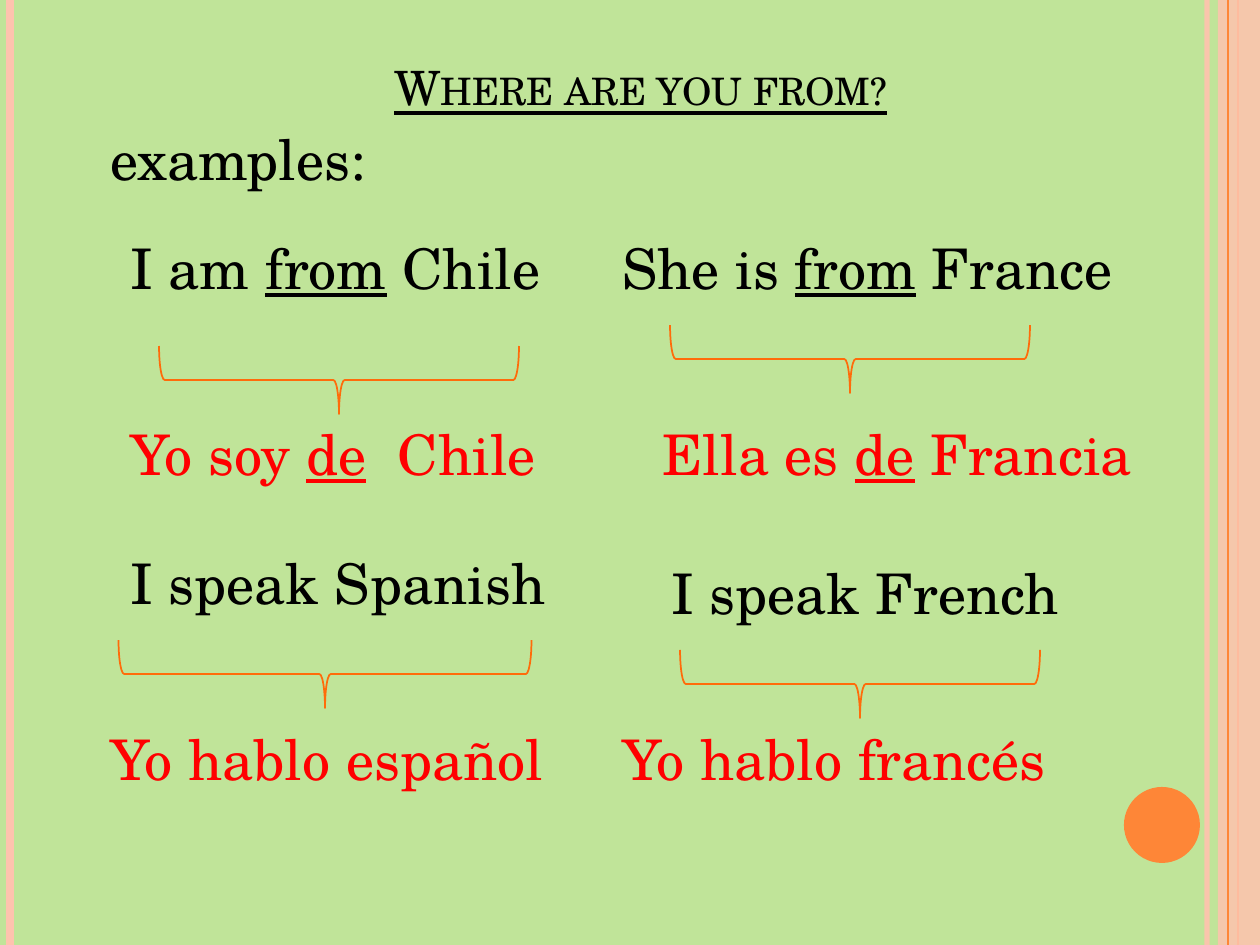
from lxml.etree import SubElement
from pptx import Presentation
from pptx.dml.color import RGBColor
from pptx.enum.shapes import MSO_CONNECTOR, MSO_SHAPE
from pptx.enum.text import MSO_ANCHOR
from pptx.oxml.ns import qn
from pptx.util import Emu, Pt

WIDE, HIGH = 1260, 945
SCALE = 914400 / 126
FONT = "TeX Gyre Schola"
GREEN = RGBColor(0xC0, 0xE4, 0x99)
PINK = RGBColor(0xFE, 0xC3, 0xAE)
ORANGE = RGBColor(0xFE, 0x86, 0x37)
BRACE = RGBColor(0xFF, 0x6B, 0x0A)
BLACK = RGBColor(0, 0, 0)
RED = RGBColor(0xFF, 0, 0)

TITLE = "_Where are you from?_"
# text with _underlined_ parts, left, top, width, colour
PHRASES = [
    ("examples:", 98, 118, 493, BLACK),
    ("I am _from_ Chile", 118, 227, 452, BLACK),
    ("She is _from_ France", 610, 227, 532, BLACK),
    ("Yo soy _de_  Chile", 118, 413, 452, RED),
    ("Ella es _de_ Francia", 650, 413, 532, RED),
    ("I speak Spanish", 118, 542, 452, BLACK),
    ("I speak French", 659, 552, 452, BLACK),
    ("Yo hablo español", 98, 718, 493, RED),
    ("Yo hablo francés", 610, 718, 493, RED),
]
# centre x, centre y, span
BRACES = [(339, 380, 360), (850, 359, 360), (325, 674, 413), (860, 684, 360)]
DEPTH = 68
# x, colour, points, opacity in percent
RULES = [(1207, PINK, 3, 93), (10, PINK, 4.5, 100), (1238, ORANGE, 1.5, 100)]
EDGE_RULE = (1228, ORANGE, 0.75, 100)


def px(num):
    return Emu(round(num * SCALE))


def fade(fill, share):
    """Set the opacity, in percent, of a solid fill inside the given element."""
    tint = fill.find(".//" + qn("a:srgbClr"))
    SubElement(tint, qn("a:alpha"), val=str(share * 1000))


def add_rule(slide, x, tone, size, share):
    rule = slide.shapes.add_connector(
        MSO_CONNECTOR.STRAIGHT, px(x), 0, px(x), px(HIGH))
    rule.line.color.rgb = tone
    rule.line.width = Pt(size)
    props = rule._element.spPr
    if share < 100:
        fade(props.find(qn("a:ln")), share)
    SubElement(props, qn("a:effectLst"))


def add_form(slide, kind, box, fill=None, line=None):
    form = slide.shapes.add_shape(kind, *map(px, box))
    form.shadow.inherit = False
    if fill is None:
        form.fill.background()
    else:
        form.fill.solid()
        form.fill.fore_color.rgb = fill
    if line is None:
        form.line.fill.background()
    else:
        form.line.color.rgb = line
        form.line.width = Pt(1)
    return form


def add_text(slide, text, box, size=32, tone=BLACK, before=6, indent=0,
             anchor=MSO_ANCHOR.TOP, small=False):
    """Add a text box; parts between underscores are underlined."""
    frame = slide.shapes.add_textbox(*map(px, box)).text_frame
    frame.word_wrap = True
    frame.vertical_anchor = anchor
    para = frame.paragraphs[0]
    para.space_before = Pt(before)
    if indent:
        para._p.get_or_add_pPr().set("marL", str(px(indent)))
    for spot, part in enumerate(text.split("_")):
        if not part:
            continue
        run = para.add_run()
        run.text = part
        font = run.font
        font.name, font.size, font.color.rgb = FONT, Pt(size), tone
        font.underline = spot % 2 == 1
        if small:
            run._r.get_or_add_rPr().set("cap", "small")


def main():
    deck = Presentation()
    deck.slide_width, deck.slide_height = px(WIDE), px(HIGH)
    slide = deck.slides.add_slide(deck.slide_layouts[6])
    back = slide.background.fill
    back.solid()
    back.fore_color.rgb = GREEN

    for rule in RULES:
        add_rule(slide, *rule)
    band = add_form(slide, MSO_SHAPE.RECTANGLE, (1218, 0, 42, HIGH), fill=PINK)
    fade(band._element.spPr.find(qn("a:solidFill")), 87)
    add_rule(slide, *EDGE_RULE)
    add_form(slide, MSO_SHAPE.OVAL, (1124, 787, 76, 76), fill=ORANGE)

    add_text(slide, TITLE, (315, 0, 640, 121), size=27, before=0, indent=67,
             anchor=MSO_ANCHOR.BOTTOM, small=True)
    for text, left, top, width, tone in PHRASES:
        add_text(slide, text, (left, top, width, 78), tone=tone)
    for mid, level, span in BRACES:
        box = (mid - DEPTH / 2, level - span / 2, DEPTH, span)
        brace = add_form(slide, MSO_SHAPE.RIGHT_BRACE, box, line=BRACE)
        brace.rotation = 90

    deck.save("out.pptx")


if __name__ == "__main__":
    main()
